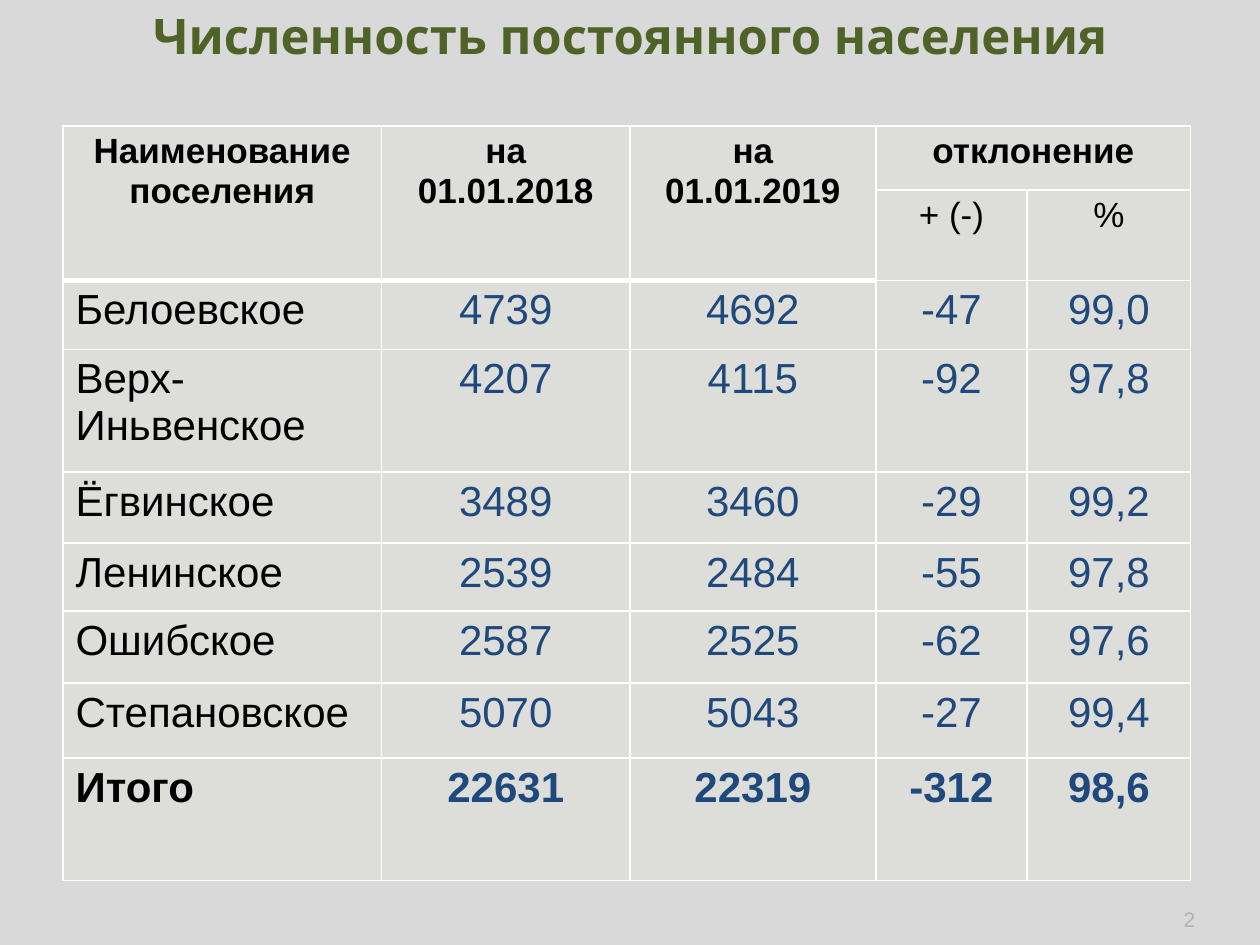
from dataclasses import dataclass

from lxml import etree
from pptx import Presentation
from pptx.dml.color import RGBColor
from pptx.enum.text import MSO_ANCHOR, PP_ALIGN
from pptx.oxml.ns import qn
from pptx.util import Pt

LEFT, CENTER, RIGHT = PP_ALIGN.LEFT, PP_ALIGN.CENTER, PP_ALIGN.RIGHT
TOP, MIDDLE = MSO_ANCHOR.TOP, MSO_ANCHOR.MIDDLE
TITLE_ONLY = 5


@dataclass(frozen=True)
class Theme:
    """Colours, fonts and type sizes of the slide."""
    background: str = "D9D9D9"
    heading: str = "4F6228"
    label: str = "000000"
    figure: str = "1F497D"
    cell: str = "EEECE1"
    cell_opacity: int = 23
    border: str = "FFFFFF"
    muted: str = "B2B2B2"
    heading_font: str = "Open Sans"
    body_font: str = "Arial"
    heading_size: int = 28
    header_size: int = 20
    body_size: int = 24
    number_size: int = 12


THEME = Theme()
COLUMNS = (182, 142, 140.5, 86.5, 93.5)
ROWS = (36.5, 34, 39.5, 70, 40.5, 39, 41, 43, 70)
HEADERS = (
    (0, 0, "Наименование поселения"),
    (0, 1, "на 01.01.2018"),
    (0, 2, "на 01.01.2019"),
    (0, 3, "отклонение"),
    (1, 3, "+ (-)"),
    (1, 4, "%"),
)
POPULATION = (
    ("Белоевское", "4739", "4692", "-47", "99,0"),
    ("Верх-Иньвенское", "4207", "4115", "-92", "97,8"),
    ("Ёгвинское", "3489", "3460", "-29", "99,2"),
    ("Ленинское", "2539", "2484", "-55", "97,8"),
    ("Ошибское", "2587", "2525", "-62", "97,6"),
    ("Степановское", "5070", "5043", "-27", "99,4"),
    ("Итого", "22631", "22319", "-312", "98,6"),
)


def write(frame, text, *, size, color, font=THEME.body_font, bold=False, align=CENTER):
    """Put one formatted paragraph into a text frame."""
    frame.word_wrap = True
    paragraph = frame.paragraphs[0]
    paragraph.alignment = align
    run = paragraph.add_run()
    run.text = text
    run.font.name = font
    run.font.size = Pt(size)
    run.font.bold = bold
    run.font.color.rgb = RGBColor.from_string(color)


def style_cell(cell, bottom_width=1):
    """Give a cell its translucent fill and white borders."""
    cell.fill.solid()
    cell.fill.fore_color.rgb = RGBColor.from_string(THEME.cell)
    properties = cell._tc.get_or_add_tcPr()
    tint = properties.find(".//" + qn("a:srgbClr"))
    etree.SubElement(tint, qn("a:alpha"), val=str(THEME.cell_opacity * 1000))
    for position, side in enumerate("LRTB"):
        width = bottom_width if side == "B" else 1
        line = etree.Element(qn("a:ln" + side), w=str(Pt(width)))
        paint = etree.SubElement(line, qn("a:solidFill"))
        etree.SubElement(paint, qn("a:srgbClr"), val=THEME.border)
        properties.insert(position, line)


def add_heading(slide, left, top, width, height):
    """Place the slide title at the top of its box."""
    title = slide.shapes.title
    title.left, title.top, title.width, title.height = map(Pt, (left, top, width, height))
    frame = title.text_frame
    frame.vertical_anchor = TOP
    frame.margin_top = Pt(3)
    write(frame, "Численность постоянного населения", size=THEME.heading_size,
          color=THEME.heading, font=THEME.heading_font, bold=True)


def add_population_table(slide, left, top, width, height):
    """Build the table of settlements with its two-level header."""
    table = slide.shapes.add_table(
        len(ROWS), len(COLUMNS), Pt(left), Pt(top), Pt(width), Pt(height)).table
    for column, size in zip(table.columns, COLUMNS):
        column.width = Pt(size)
    for row, size in zip(table.rows, ROWS):
        row.height = Pt(size)
    for r in range(len(ROWS)):
        for c in range(len(COLUMNS)):
            style_cell(table.cell(r, c), 3 if r < 2 and c < 3 else 1)
    for c in range(3):
        table.cell(0, c).merge(table.cell(1, c))
    table.cell(0, 3).merge(table.cell(0, 4))

    for r, c, text in HEADERS:
        write(table.cell(r, c).text_frame, text, size=THEME.header_size,
              color=THEME.label, bold=r == 0)
    for r, record in enumerate(POPULATION, start=2):
        for c, text in enumerate(record):
            write(table.cell(r, c).text_frame, text, size=THEME.body_size,
                  color=THEME.figure if c else THEME.label,
                  bold=r == len(ROWS) - 1, align=CENTER if c else LEFT)


def add_page_number(slide, left, top, width, height):
    """Place the page number in the bottom corner."""
    frame = slide.shapes.add_textbox(Pt(left), Pt(top), Pt(width), Pt(height)).text_frame
    frame.vertical_anchor = MIDDLE
    write(frame, "2", size=THEME.number_size, color=THEME.muted, align=RIGHT)


def main():
    """Build and save the slide."""
    deck = Presentation()
    deck.slide_width, deck.slide_height = Pt(720), Pt(540)
    slide = deck.slides.add_slide(deck.slide_layouts[TITLE_ONLY])
    fill = slide.background.fill
    fill.solid()
    fill.fore_color.rgb = RGBColor.from_string(THEME.background)
    add_heading(slide, 36, 0, 648, 83)
    add_population_table(slide, 36, 72, sum(COLUMNS), sum(ROWS))
    add_page_number(slide, 630, 512, 60, 26)
    deck.save("out.pptx")


if __name__ == "__main__":
    main()
